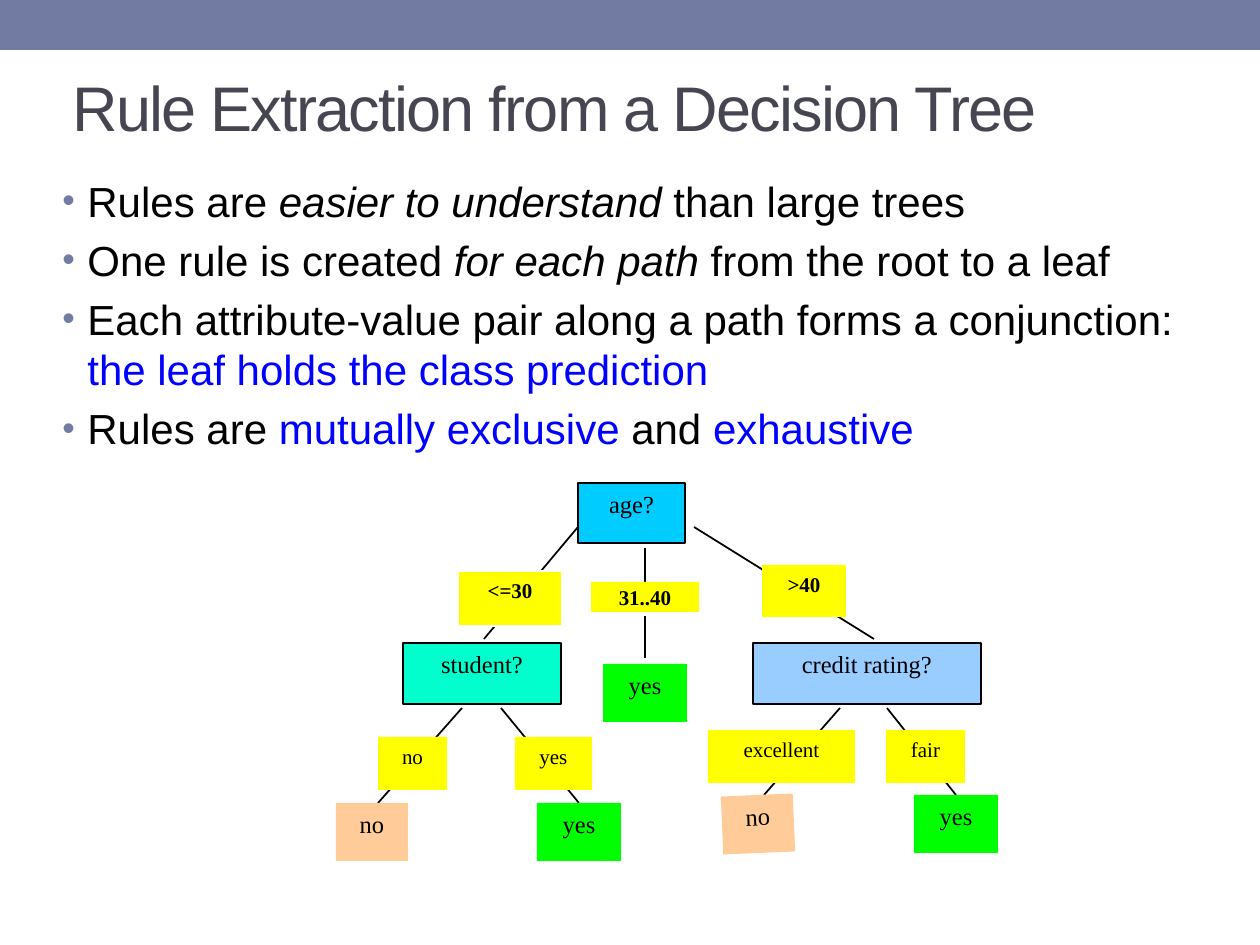
"""Build a slide that explains rule extraction with a decision tree."""
from lxml.etree import SubElement
from pptx import Presentation
from pptx.dml.color import RGBColor
from pptx.enum.shapes import MSO_CONNECTOR as Connector, MSO_SHAPE as Shape
from pptx.enum.text import MSO_ANCHOR as Anchor, PP_ALIGN as Align
from pptx.oxml.ns import qn
from pptx.util import Pt


class Theme:
    color = {
        "slate": "727CA3", "title": "464653", "black": "000000", "white": "FFFFFF",
        "blue": "0000FF", "sky": "00CCFF", "teal": "00FFCC", "pale_blue": "99CCFF",
        "yellow": "FFFF00", "green": "00FF00", "peach": "FFCC99",
    }
    color = {name: RGBColor.from_string(value) for name, value in color.items()}
    title = {"size": Pt(36), "name": "Arial"}
    body = {"size": Pt(24), "name": "Arial"}
    node = {"size": Pt(14), "name": "Times New Roman"}
    branch = {"size": Pt(12), "name": "Times New Roman"}
    test = {**branch, "bold": True}
    line_width = Pt(1)


PX = 914400 / 126


def add_run(paragraph, text, color, values):
    run = paragraph.add_run()
    run.text = text
    for name, value in values.items():
        setattr(run.font, name, value)
    run.font.color.rgb = Theme.color[color]
    return run


def add_box(box, fill, outline=None):
    shape = slide.shapes.add_shape(Shape.RECTANGLE, *(round(v * PX) for v in box))
    shape.shadow.inherit = False
    shape.fill.solid()
    shape.fill.fore_color.rgb = Theme.color[fill]
    if outline:
        shape.line.color.rgb = Theme.color[outline]
        shape.line.width = Theme.line_width
    else:
        shape.line.fill.background()
    return shape


presentation = Presentation()
presentation.slide_width = round(1260 * PX)
presentation.slide_height = round(945 * PX)
slide = presentation.slides.add_slide(presentation.slide_layouts[6])

add_box((0, 0, 1260, 50), "slate")

edges = {
    "age to student": (578, 527, 484, 639),
    "age to yes, upper": (645, 548, 645, 587),
    "age to yes, lower": (645, 616, 645, 658),
    "age to credit": (694, 527, 874, 639),
    "student to no": (462, 708, 378, 803),
    "student to yes": (501, 708, 579, 803),
    "credit to no": (840, 708, 764, 795),
    "credit to yes": (887, 708, 956, 795),
}
connectors = {}
for name, ends in edges.items():
    connector = slide.shapes.add_connector(Connector.STRAIGHT, *(round(v * PX) for v in ends))
    connector.line.color.rgb = Theme.color["black"]
    connector.line.width = Theme.line_width
    SubElement(connector._element.spPr, qn("a:effectLst"))
    connectors[name] = connector

nodes = {
    "age": ("age?", (578, 483, 107, 60), "sky", "black", Theme.node),
    "student": ("student?", (403, 643, 158, 61), "teal", "black", Theme.node),
    "credit": ("credit rating?", (753, 643, 228, 61), "pale_blue", "black", Theme.node),
    "age low": ("<=30", (458, 571, 104, 55), "yellow", "white", Theme.test),
    "age middle": ("31..40", (591, 582, 108, 30), "yellow", None, Theme.test),
    "age high": (">40", (762, 565, 84, 52), "yellow", None, Theme.test),
    "not student": ("no", (378, 737, 69, 53), "yellow", None, Theme.branch),
    "is student": ("yes", (515, 737, 77, 53), "yellow", None, Theme.branch),
    "excellent": ("excellent", (708, 730, 147, 53), "yellow", None, Theme.branch),
    "fair": ("fair", (886, 730, 79, 53), "yellow", None, Theme.branch),
    "student no": ("no", (336, 803, 72, 58), "peach", None, Theme.node),
    "student yes": ("yes", (537, 803, 84, 58), "green", None, Theme.node),
    "age yes": ("yes", (603, 664, 84, 58), "green", None, Theme.node),
    "credit no": ("no", (722, 795, 72, 58), "peach", None, Theme.node),
    "credit yes": ("yes", (914, 795, 84, 58), "green", None, Theme.node),
}
shapes = {}
for name, (text, box, fill, outline, font) in nodes.items():
    shape = add_box(box, fill, outline)
    shape.text_frame.word_wrap = False
    shape.text_frame.vertical_anchor = Anchor.TOP
    paragraph = shape.text_frame.paragraphs[0]
    paragraph.alignment = Align.CENTER
    add_run(paragraph, text, "black", font)
    shapes[name] = shape

shapes["age middle"].text_frame.vertical_anchor = Anchor.MIDDLE
shapes["credit no"].rotation = 357.6
for parent in ("student", "credit"):
    connectors[f"{parent} to yes"].end_connect(shapes[f"{parent} yes"], 0)

title = slide.shapes.add_textbox(*(round(v * PX) for v in (60, 64, 1095, 85)))
title.text_frame.word_wrap = True
title.text_frame.vertical_anchor = Anchor.MIDDLE
heading = add_run(title.text_frame.paragraphs[0], "Rule Extraction from a Decision Tree",
                  "title", Theme.title)
heading.font._element.set("spc", "-100")

bullets = [
    [("Rules are ", "black", False), ("easier to understand", "black", True),
     (" than large trees", "black", False)],
    [("One rule is created ", "black", False), ("for each path", "black", True),
     (" from the root to a leaf", "black", False)],
    [("Each attribute-value pair along a path forms a conjunction: ", "black", False),
     ("the leaf holds the class prediction", "blue", False)],
    [("Rules are ", "black", False), ("mutually exclusive ", "blue", False),
     ("and ", "black", False), ("exhaustive", "blue", False)],
]
body = slide.shapes.add_textbox(*(round(v * PX) for v in (50, 169, 1166, 595)))
body.text_frame.word_wrap = True
for index, runs in enumerate(bullets):
    paragraph = body.text_frame.add_paragraph() if index else body.text_frame.paragraphs[0]
    paragraph.space_before = Pt(5)
    properties = paragraph._p.get_or_add_pPr()
    properties.set("marL", str(round(25 * PX)))
    properties.set("indent", str(round(-25 * PX)))
    bullet_color = SubElement(properties, qn("a:buClr"))
    SubElement(bullet_color, qn("a:srgbClr"), val=str(Theme.color["slate"]))
    SubElement(properties, qn("a:buSzPct"), val="85000")
    SubElement(properties, qn("a:buFont"), typeface="Arial")
    SubElement(properties, qn("a:buChar"), char="•")
    for text, color, italic in runs:
        add_run(paragraph, text, color, {**Theme.body, "italic": italic})

presentation.save("out.pptx")
